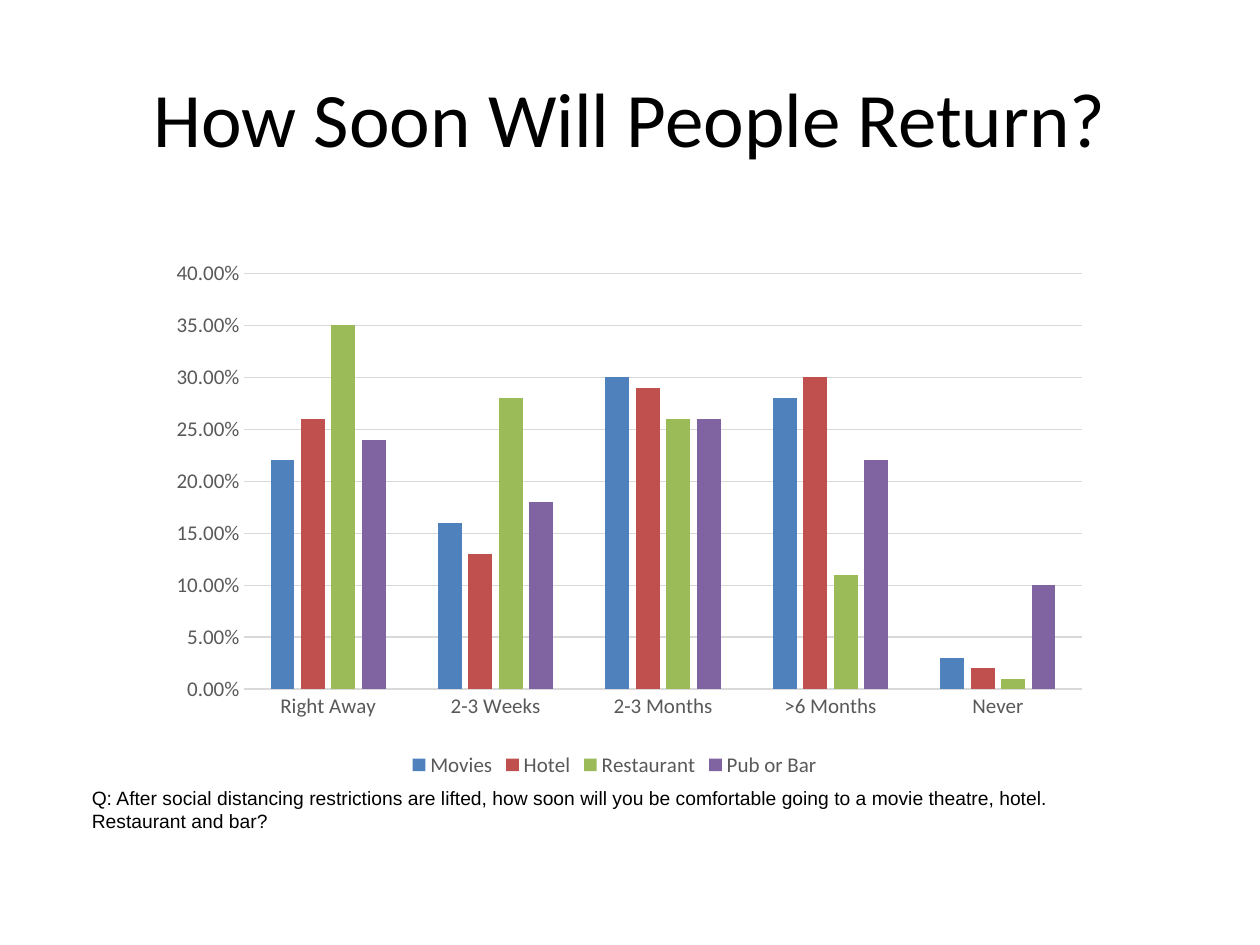
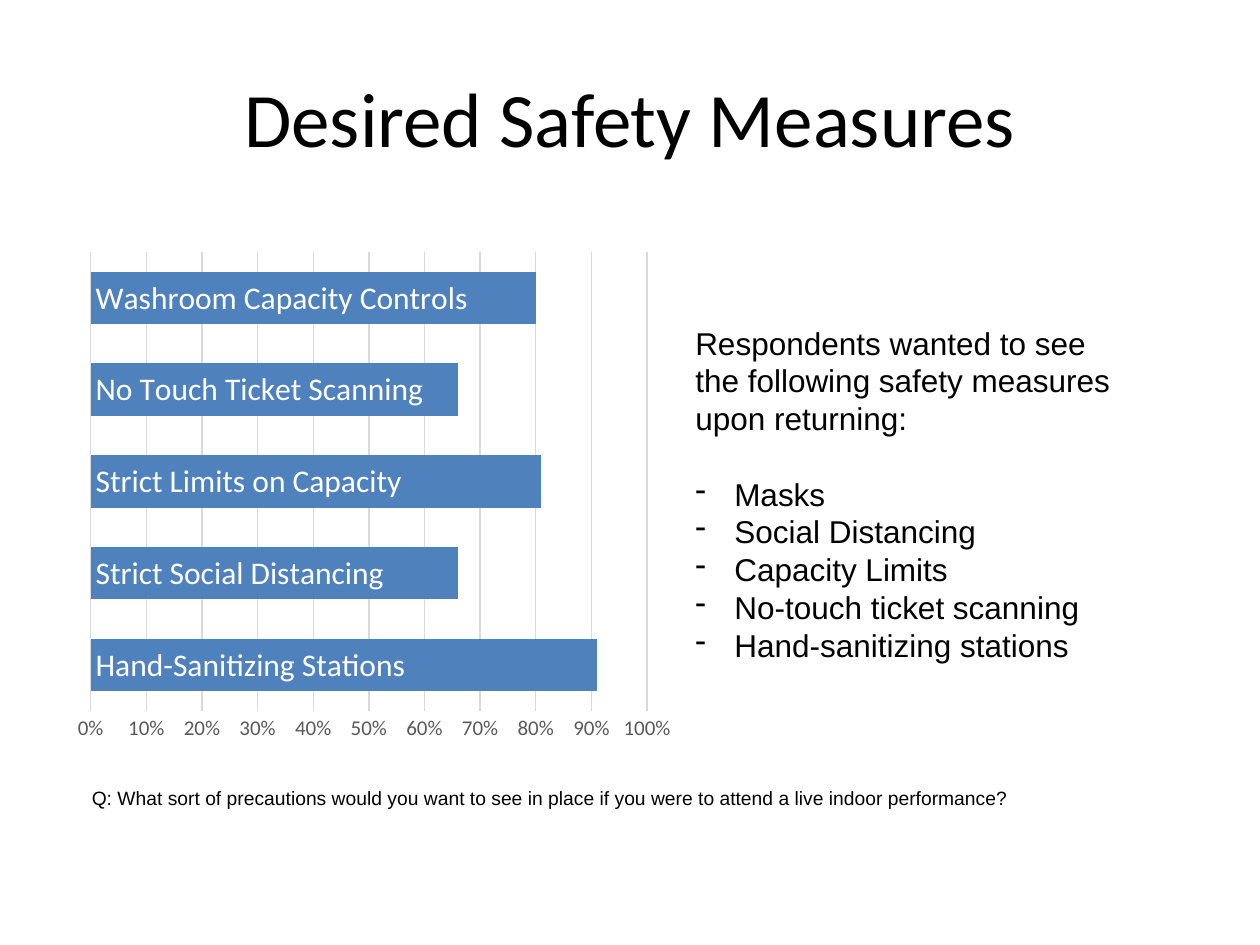
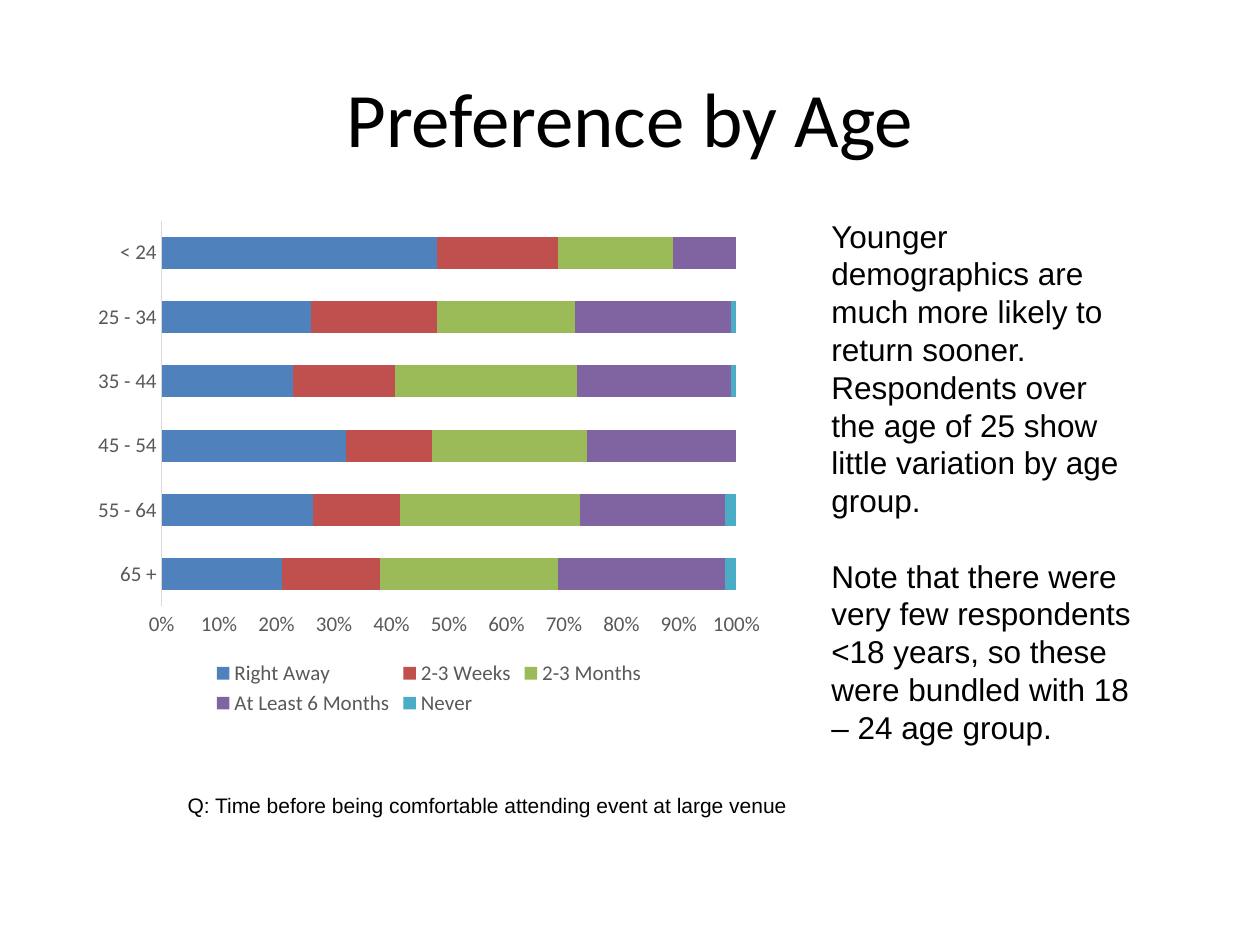
import dataclasses

import lxml.etree
import pptx
import pptx.chart.data
import pptx.dml.color
import pptx.enum.chart
import pptx.enum.text
import pptx.oxml
import pptx.oxml.ns
import pptx.util

CHART_TYPE = pptx.enum.chart.XL_CHART_TYPE
COLUMNS, ROWS = 100, 75


@dataclasses.dataclass(frozen=True)
class Theme:
    heading_font: str = "Calibri"
    body_font: str = "Arial"
    text: str = "000000"
    inverse: str = "FFFFFF"
    axis_text: str = "595959"
    rule: str = "D9D9D9"
    series: tuple = ("4F81BD", "C0504D", "9BBB59", "8064A2", "4BACC6")
    title_size: float = 44
    body_size: float = 18
    axis_size: float = 12
    chart_size: float = 10
    question_size: float = 11
    rule_width: float = 0.75
    paragraph_gap: float = 21.5
    bullet_indent: float = 0.31


THEME = Theme()


def color(code):
    return pptx.dml.color.RGBColor.from_string(code)


def place(presentation, column, row, width, height):
    across = presentation.slide_width / COLUMNS
    down = presentation.slide_height / ROWS
    return [round(length) for length in (column * across, row * down, width * across, height * down)]


def format_font(font, name, size, code):
    font.name = name
    font.size = pptx.util.Pt(size)
    font.color.rgb = color(code)


def add_bullet(paragraph, character):
    indent = pptx.util.Inches(THEME.bullet_indent)
    properties = paragraph._p.get_or_add_pPr()
    properties.set("marL", str(indent))
    properties.set("indent", str(-indent))
    lxml.etree.SubElement(properties, pptx.oxml.ns.qn("a:buFontTx"))
    bullet = lxml.etree.SubElement(properties, pptx.oxml.ns.qn("a:buChar"))
    bullet.set("char", character)


def write(paragraph, text, *, font=THEME.body_font, size=THEME.body_size,
          code=THEME.text, align=pptx.enum.text.PP_ALIGN.LEFT, gap=0, bullet=None):
    paragraph.alignment = align
    if gap:
        paragraph.space_before = pptx.util.Pt(gap)
    if bullet:
        add_bullet(paragraph, bullet)
    run = paragraph.add_run()
    run.text = text
    format_font(run.font, font, size, code)


def add_titled_slide(presentation, title):
    slide = presentation.slides.add_slide(presentation.slide_layouts[5])
    shape = slide.shapes.title
    shape.left, shape.top, shape.width, shape.height = place(presentation, 5, 3, 90, 12.5)
    shape.text_frame.vertical_anchor = pptx.enum.text.MSO_ANCHOR.MIDDLE
    write(shape.text_frame.paragraphs[0], title, font=THEME.heading_font,
          size=THEME.title_size, align=pptx.enum.text.PP_ALIGN.CENTER)
    return slide


def add_text(slide, area, paragraphs, wrap=True):
    frame = slide.shapes.add_textbox(*area).text_frame
    frame.word_wrap = wrap
    frame.auto_size = pptx.enum.text.MSO_AUTO_SIZE.SHAPE_TO_FIT_TEXT
    for index, (text, options) in enumerate(paragraphs):
        paragraph = frame.add_paragraph() if index else frame.paragraphs[0]
        write(paragraph, text, **options)


def draw_rule(line):
    line.color.rgb = color(THEME.rule)
    line.width = pptx.util.Pt(THEME.rule_width)


def format_axis(axis):
    axis.major_tick_mark = axis.minor_tick_mark = pptx.enum.chart.XL_TICK_MARK.NONE
    format_font(axis.tick_labels.font, THEME.heading_font, THEME.axis_size, THEME.axis_text)


def add_chart(slide, area, kind, categories, series, *, gap, overlap=0,
              number_format="0%", grid=True, legend=True, maximum=None, step=None):
    data = pptx.chart.data.CategoryChartData()
    data.categories = categories
    for name, values in series:
        data.add_series(name, values)
    chart = slide.shapes.add_chart(kind, *area, data).chart
    chart.has_title = False
    format_font(chart.font, THEME.heading_font, THEME.chart_size, THEME.text)

    plot = chart.plots[0]
    plot.gap_width, plot.overlap, plot.vary_by_categories = gap, overlap, False
    for item, code in zip(plot.series, THEME.series):
        item.format.fill.solid()
        item.format.fill.fore_color.rgb = color(code)
        item.invert_if_negative = False

    format_axis(chart.category_axis)
    draw_rule(chart.category_axis.format.line)
    value_axis = chart.value_axis
    format_axis(value_axis)
    value_axis.format.line.fill.background()
    value_axis.tick_labels.number_format = number_format
    value_axis.tick_labels.number_format_is_linked = False
    value_axis.has_major_gridlines = grid
    if grid:
        draw_rule(value_axis.major_gridlines.format.line)
    if maximum:
        value_axis.minimum_scale, value_axis.maximum_scale = 0, maximum
        value_axis.major_unit = step

    chart.has_legend = legend
    if legend:
        chart.legend.position = pptx.enum.chart.XL_LEGEND_POSITION.BOTTOM
        chart.legend.include_in_layout = False
        format_font(chart.legend.font, THEME.heading_font, THEME.axis_size, THEME.axis_text)
    return chart


def fix_plot_area(chart, left, top, width, height):
    plot_area = chart.element.find(".//" + pptx.oxml.ns.qn("c:plotArea"))
    for layout in plot_area.findall(pptx.oxml.ns.qn("c:layout")):
        plot_area.remove(layout)
    settings = (("layoutTarget", "inner"), ("xMode", "edge"), ("yMode", "edge"),
                ("x", left), ("y", top), ("w", width), ("h", height))
    layout = pptx.oxml.parse_xml(
        f'<c:layout {pptx.oxml.ns.nsdecls("c")}><c:manualLayout>'
        + "".join(f'<c:{tag} val="{value}"/>' for tag, value in settings)
        + "</c:manualLayout></c:layout>")
    plot_area.insert(0, layout)


def label_bars_with_categories(chart):
    chart.category_axis.tick_label_position = pptx.enum.chart.XL_TICK_LABEL_POSITION.NONE
    labels = chart.plots[0].series[0].data_labels
    labels.show_category_name = True
    labels.show_value = False
    labels.position = pptx.enum.chart.XL_LABEL_POSITION.INSIDE_BASE
    format_font(labels.font, THEME.heading_font, THEME.body_size, THEME.inverse)
    label_elements = chart.element.iter(pptx.oxml.ns.qn("c:dLbls"))
    for label_element in label_elements:
        for body in label_element.iter(pptx.oxml.ns.qn("a:bodyPr")):
            body.set("wrap", "none")


def add_question(slide, area, text, size=THEME.question_size, wrap=True):
    add_text(slide, area, [(text, {"size": size})], wrap)


def build_return_slide(presentation):
    slide = add_titled_slide(presentation, "How Soon Will People Return?")
    width, height = 74.2, 47.9
    chart = add_chart(
        slide, place(presentation, 11.7, 14.2, width, height), CHART_TYPE.COLUMN_CLUSTERED,
        ["Right Away", "2-3 Weeks", "2-3 Months", ">6 Months", "Never"],
        [("Movies", (0.22, 0.16, 0.3, 0.28, 0.03)),
         ("Hotel", (0.26, 0.13, 0.29, 0.3, 0.02)),
         ("Restaurant", (0.35, 0.28, 0.26, 0.11, 0.01)),
         ("Pub or Bar", (0.24, 0.18, 0.26, 0.22, 0.1))],
        gap=219, overlap=-27, number_format="0.00%", maximum=0.4, step=0.05)
    fix_plot_area(chart, 7.7 / width, 7.5 / height, 66.5 / width, 33 / height)
    add_question(slide, place(presentation, 6.3, 61.9, 84.5, 4.7),
                 "Q: After social distancing restrictions are lifted, how soon will you be "
                 "comfortable going to a movie theatre, hotel. Restaurant and bar?")


def build_safety_slide(presentation):
    slide = add_titled_slide(presentation, "Desired Safety Measures")
    chart = add_chart(
        slide, place(presentation, 5.2, 19.2, 49, 40.4), CHART_TYPE.BAR_CLUSTERED,
        ["Hand-Sanitizing Stations", "Strict Social Distancing", "Strict Limits on Capacity",
         "No Touch Ticket Scanning", "Washroom Capacity Controls"],
        [("Series 1", (0.91, 0.66, 0.81, 0.66, 0.8))],
        gap=75, legend=False, maximum=1, step=0.1)
    label_bars_with_categories(chart)
    measures = ["Masks", "Social Distancing", "Capacity Limits",
                "No-touch ticket scanning", "Hand-sanitizing stations"]
    intro = "Respondents wanted to see the following safety measures upon returning:"
    add_text(slide, place(presentation, 54.2, 25.2, 35, 28.3),
             [(intro, {})] + [(measure, {"bullet": "-", "gap": 0 if index else THEME.paragraph_gap})
                              for index, measure in enumerate(measures)])
    add_question(slide, place(presentation, 6.3, 61.9, 84.5, 2.9),
                 "Q: What sort of precautions would you want to see in place if you were "
                 "to attend a live indoor performance?")


def build_age_slide(presentation):
    slide = add_titled_slide(presentation, "Preference by Age")
    add_chart(
        slide, place(presentation, 6.7, 16.7, 54.7, 40.5), CHART_TYPE.BAR_STACKED_100,
        ["65 +", "55 - 64", "45 - 54", "35 - 44", "25 - 34", "< 24"],
        [("Right Away", (21, 26, 32, 23, 26, 48)),
         ("2-3 Weeks", (17, 15, 15, 18, 22, 21)),
         ("2-3 Months", (31, 31, 27, 32, 24, 20)),
         ("At Least 6 Months", (29, 25, 26, 27, 27, 11)),
         ("Never", (2, 2, 0, 1, 1, None))],
        gap=100, overlap=100, grid=False)
    add_text(slide, place(presentation, 65, 16.7, 26.4, 43.4),
             [("Younger demographics are much more likely to return sooner. Respondents "
               "over the age of 25 show little variation by age group.", {}),
              ("Note that there were very few respondents <18 years, so these were "
               "bundled with 18 – 24 age group.", {"gap": THEME.paragraph_gap})])
    add_question(slide, place(presentation, 13.9, 62.4, 50, 3),
                 "Q: Time before being comfortable attending event at large venue",
                 size=THEME.axis_size, wrap=False)


def main():
    presentation = pptx.Presentation()
    presentation.slide_width = pptx.util.Inches(10)
    presentation.slide_height = pptx.util.Inches(7.5)
    build_return_slide(presentation)
    build_safety_slide(presentation)
    build_age_slide(presentation)
    presentation.save("out.pptx")


if __name__ == "__main__":
    main()
